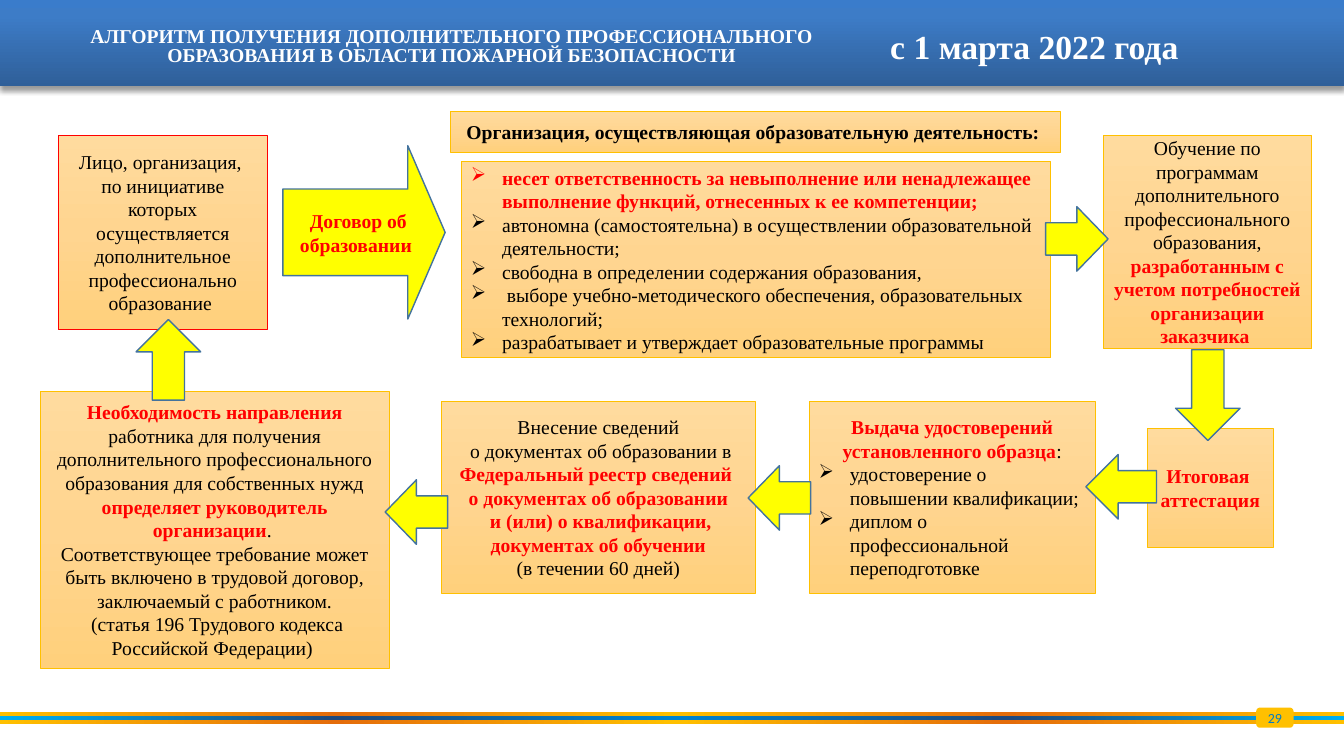
from dataclasses import dataclass
from typing import NamedTuple

from lxml.etree import SubElement
from pptx import Presentation
from pptx.dml.color import RGBColor
from pptx.enum.shapes import MSO_SHAPE
from pptx.enum.text import MSO_ANCHOR, PP_ALIGN
from pptx.oxml.ns import qn
from pptx.util import Inches, Pt


@dataclass(frozen=True)
class Theme:
    """Colours, fonts and type sizes of the slide."""
    black: str = "000000"
    white: str = "FFFFFF"
    red: str = "FF0000"
    yellow: str = "FFFF00"
    gold: str = "FFC000"
    arrow_edge: str = "43739E"
    page_ink: str = "047CC4"
    banner: tuple = ((0, "2F5F99"), (80, "3D7CC7"), (100, "3A7CCB"))
    card: tuple = ((0, "FFDB9E"), (50, "FFD590"), (100, "FFD07C"))
    blue_stripe: tuple = ((0, "00B0F0"), (25, "1F497D"), (50, "0084CF"),
                          (75, "1F497D"), (100, "00B0F0"))
    gold_stripe: tuple = ((0, "FFC000"), (25, "E46C0A"), (50, "FFC000"),
                          (75, "E46C0A"), (100, "FFC000"))
    font: str = "Times New Roman"
    page_font: str = "Calibri"
    body: int = 14
    date: int = 24
    page: int = 10


THEME = Theme()


class Run(NamedTuple):
    """A piece of text in one style."""
    text: str
    color: str = THEME.black
    bold: bool = False
    size: int = THEME.body
    font: str = THEME.font


class Para(NamedTuple):
    """A paragraph of runs, centred unless bulleted."""
    runs: tuple
    bulleted: bool = False
    spacing: float = 1.0


def hot(text):
    """Return a red bold run."""
    return Run(text, THEME.red, True)


def line(*runs):
    """Return a centred paragraph."""
    return Para(runs)


def bullet(run):
    """Return a bulleted paragraph."""
    return Para((run,), bulleted=True)


class FlowSlide:
    """Draws the parts of the flow chart on one slide."""

    def __init__(self, slide, theme):
        self.slide, self.theme = slide, theme

    def block(self, box, fill, edge=None, kind=MSO_SHAPE.RECTANGLE, angle=90, width=0.5):
        """Add a shape with a plain or gradient fill."""
        shape = self.slide.shapes.add_shape(kind, *map(Inches, box))
        shape.shadow.inherit = False
        if isinstance(fill, str):
            shape.fill.solid()
            shape.fill.fore_color.rgb = RGBColor.from_string(fill)
        else:
            self.gradient(shape, fill, angle)
        if edge:
            shape.line.color.rgb = RGBColor.from_string(edge)
            shape.line.width = Pt(width)
        else:
            shape.line.fill.background()
        return shape

    def gradient(self, shape, stops, angle):
        """Fill a shape with a linear gradient, angle clockwise."""
        shape.fill.gradient()
        shape.fill.gradient_angle = (360 - angle) % 360
        stop_list = shape.element.spPr.find(qn("a:gradFill")).find(qn("a:gsLst"))
        for stop in list(stop_list):
            stop_list.remove(stop)
        for position, color in stops:
            stop = SubElement(stop_list, qn("a:gs"), pos=str(position * 1000))
            SubElement(stop, qn("a:srgbClr"), val=color)

    def banner(self, box):
        """Add the header band with its soft shadow."""
        band = self.block(box, self.theme.banner, angle=270)
        effects = band.element.spPr.find(qn("a:effectLst"))
        shadow = SubElement(effects, qn("a:outerShdw"), blurRad=str(Pt(4)),
                            dist=str(Pt(3)), dir="5400000", rotWithShape="0")
        color = SubElement(shadow, qn("a:srgbClr"), val=self.theme.black)
        SubElement(color, qn("a:alpha"), val="40000")

    def fill_text(self, frame, paragraphs, insets=(0.09, 0.04)):
        """Put paragraphs run by run into a text frame."""
        frame.word_wrap = True
        frame.vertical_anchor = MSO_ANCHOR.MIDDLE
        frame.margin_left = frame.margin_right = Inches(insets[0])
        frame.margin_top = frame.margin_bottom = Inches(insets[1])
        for index, content in enumerate(paragraphs):
            paragraph = frame.add_paragraph() if index else frame.paragraphs[0]
            paragraph.alignment = PP_ALIGN.LEFT if content.bulleted else PP_ALIGN.CENTER
            paragraph.line_spacing = content.spacing
            if content.bulleted:
                self.mark(paragraph)
            for piece in content.runs:
                run = paragraph.add_run()
                run.text = piece.text
                run.font.name = piece.font
                run.font.size = Pt(piece.size)
                run.font.bold = piece.bold
                run.font.color.rgb = RGBColor.from_string(piece.color)

    def mark(self, paragraph):
        """Give a paragraph an arrowhead bullet with a hanging indent."""
        properties = paragraph._p.get_or_add_pPr()
        properties.set("marL", str(Inches(0.31)))
        properties.set("indent", str(-Inches(0.31)))
        SubElement(properties, qn("a:buChar"), char="➢")

    def heading(self, box, text, size):
        """Add white bold text on the header band."""
        frame = self.slide.shapes.add_textbox(*map(Inches, box)).text_frame
        run = Run(text, self.theme.white, True, size)
        self.fill_text(frame, [Para((run,), spacing=0.8)], (0.07, 0.03))

    def card(self, box, *paragraphs, edge=THEME.gold):
        """Add an orange card with text."""
        self.fill_text(self.block(box, self.theme.card, edge).text_frame, paragraphs)

    def arrow(self, box, rotation=0):
        """Add a yellow block arrow, pointing down before rotation."""
        arrow = self.block(box, self.theme.yellow, self.theme.arrow_edge,
                           MSO_SHAPE.DOWN_ARROW, width=1)
        arrow.rotation = rotation
        return arrow

    def label(self, box, *paragraphs):
        """Add a yellow label without an outline."""
        self.fill_text(self.block(box, self.theme.yellow).text_frame, paragraphs)

    def footer(self, number):
        """Add the striped footer and the page number."""
        for top, stripe in ((7.1, self.theme.blue_stripe), (7.06, self.theme.gold_stripe),
                            (7.14, self.theme.gold_stripe)):
            self.block((0, top, 13.33, 0.04), stripe, angle=0)
        badge = self.block((12.46, 7.02, 0.37, 0.2), self.theme.gold,
                           kind=MSO_SHAPE.ROUNDED_RECTANGLE)
        badge.adjustments[0] = 0.18
        page = Run(number, self.theme.page_ink, False, self.theme.page, self.theme.page_font)
        self.fill_text(badge.text_frame, [line(page)], (0, 0))


def main():
    """Build and save the slide."""
    deck = Presentation()
    deck.slide_width, deck.slide_height = Inches(13.33), Inches(7.5)
    flow = FlowSlide(deck.slides.add_slide(deck.slide_layouts[6]), THEME)

    flow.banner((0, -0.01, 13.33, 0.86))
    flow.footer("29")
    flow.heading((0.54, 0.1, 7.88, 0.74), "АЛГОРИТМ ПОЛУЧЕНИЯ ДОПОЛНИТЕЛЬНОГО ПРОФЕССИОНАЛЬНОГО "
                 "ОБРАЗОВАНИЯ В ОБЛАСТИ ПОЖАРНОЙ БЕЗОПАСНОСТИ", THEME.body)
    flow.heading((8.67, 0.12, 3.26, 0.74), "с 1 марта 2022 года ", THEME.date)

    flow.card((4.47, 1.11, 6.05, 0.4), line(
        Run("Организация, осуществляющая образовательную деятельность: ", bold=True)))
    flow.card((0.58, 1.34, 2.07, 1.93), line(Run("Лицо, организация, ")), line(
        Run("по инициативе которых осуществляется дополнительное "
            "профессионально образование ")), edge=THEME.red)
    contract = flow.arrow((2.75, 1.5, 1.72, 1.61), 270)
    contract.adjustments[1] = 0.23
    flow.label((2.85, 1.99, 1.41, 0.64), line(hot("Договор об образовании ")))
    flow.card((4.58, 1.6, 5.84, 1.95),
              bullet(hot("несет ответственность за невыполнение или ненадлежащее "
                         "выполнение функций, отнесенных к ее компетенции;")),
              bullet(Run("автономна (самостоятельна) в осуществлении образовательной деятельности;")),
              bullet(Run("свободна в определении содержания образования,")),
              bullet(Run(" выборе учебно-методического обеспечения, образовательных технологий;")),
              bullet(Run("разрабатывает и утверждает образовательные программы")))
    flow.card((10.94, 1.34, 2.07, 2.12), line(
        Run("Обучение по программам дополнительного профессионального образования, "),
        hot("разработанным с учетом потребностей организации заказчика ")))
    flow.card((11.38, 4.25, 1.25, 1.18), line(hot("Итоговая ")), line(hot("аттестация")))
    flow.card((8.03, 3.98, 2.83, 1.91),
              line(hot("Выдача удостоверений установленного образца"), Run(":")),
              bullet(Run("удостоверение о повышении квалификации;")),
              bullet(Run("диплом о профессиональной переподготовке")))
    flow.card((4.38, 3.98, 3.11, 1.91), line(Run("Внесение сведений")),
              line(Run(" о документах об образовании в "), hot("Федеральный реестр сведений ")),
              line(hot("о документах об образовании")),
              line(hot(" и (или) о квалификации, документах об обучении")),
              line(Run("(в течении 60 дней)")))
    flow.card((0.4, 3.88, 3.46, 2.75),
              line(hot("Необходимость направления "),
                   Run("работника для получения дополнительного профессионального "
                       "образования для собственных нужд "),
                   hot("определяет руководитель организации"), Run(". ")),
              line(Run("Соответствующее требование может быть включено в трудовой договор, "
                       "заключаемый с работником.")),
              line(Run(" (статья 196 Трудового кодекса Российской Федерации) ")))

    for box, rotation in (((10.8, 4.48, 0.64, 0.7), 90), ((10.36, 2.06, 0.64, 0.62), 270),
                          ((11.66, 3.47, 0.64, 0.9), 0), ((3.81, 4.77, 0.64, 0.62), 90),
                          ((7.41, 4.63, 0.64, 0.62), 90), ((1.35, 3.17, 0.64, 0.8), 180)):
        flow.arrow(box, rotation)
    deck.save("out.pptx")


if __name__ == "__main__":
    main()
